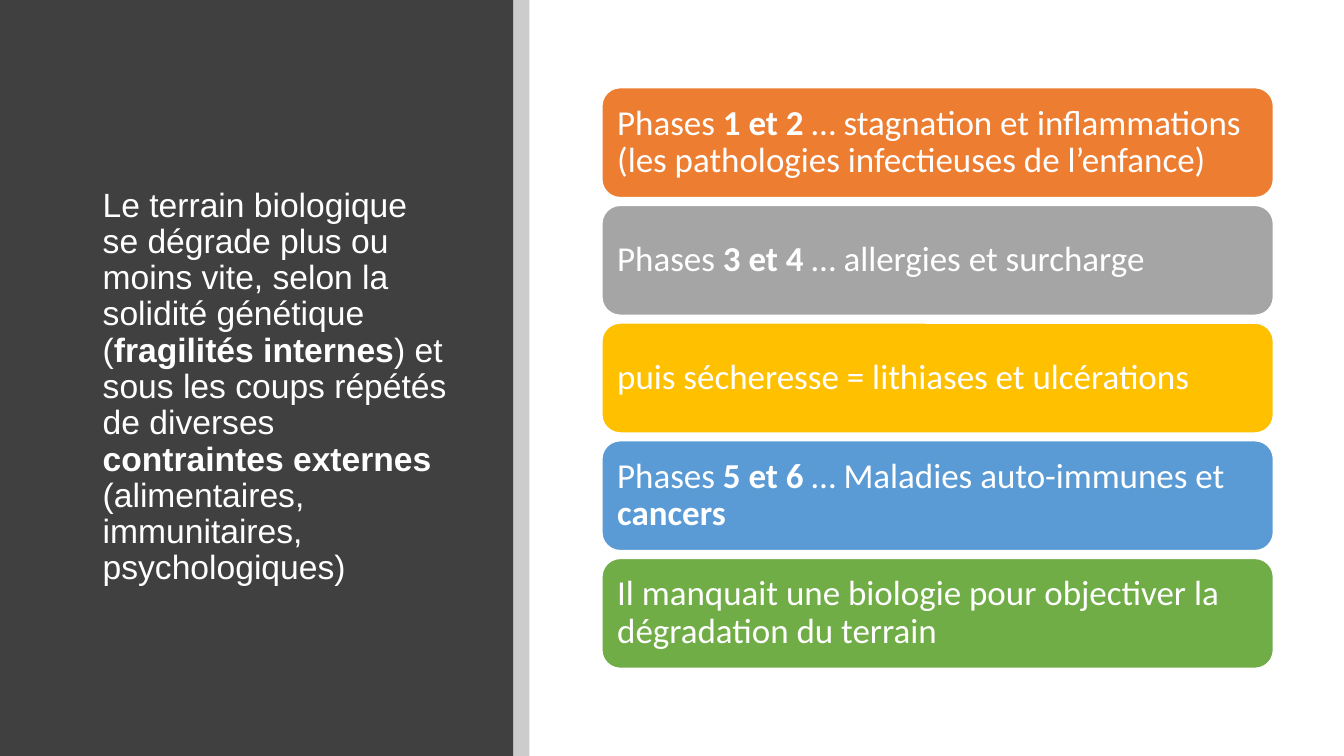
from lxml.etree import SubElement
from pptx import Presentation
from pptx.dml.color import RGBColor
from pptx.enum.shapes import MSO_SHAPE
from pptx.enum.text import MSO_ANCHOR, PP_ALIGN
from pptx.oxml.ns import qn
from pptx.util import Inches, Pt

WHITE = "FFFFFF"


def color(hex_code):
    return RGBColor.from_string(hex_code)


class PhaseSlide:
    """Holds the text style and the current slide."""

    line_spacing = 0.9
    text_color = WHITE

    def __init__(self, presentation):
        self.slide = presentation.slides.add_slide(presentation.slide_layouts[6])

    def block(self, kind, left, top, width, height, fill, outline=None, opacity=None):
        block = self.slide.shapes.add_shape(
            kind, Inches(left), Inches(top), Inches(width), Inches(height))
        block.shadow.inherit = False
        block.fill.solid()
        block.fill.fore_color.rgb = color(fill)
        if outline:
            block.line.color.rgb = color(outline)
            block.line.width = Pt(1)
        else:
            block.line.fill.background()
        if opacity is not None:
            fill_color = block.element.spPr.find(qn("a:solidFill")).find(qn("a:srgbClr"))
            SubElement(fill_color, qn("a:alpha")).set("val", str(opacity * 1000))
        return block

    def add_runs(self, frame, runs, font, size):
        """Fill a frame with (text, bold) runs, left-aligned and centred vertically."""
        frame.word_wrap = True
        frame.vertical_anchor = MSO_ANCHOR.MIDDLE
        paragraph = frame.paragraphs[0]
        paragraph.alignment = PP_ALIGN.LEFT
        paragraph.line_spacing = self.line_spacing
        for text, bold in runs:
            run = paragraph.add_run()
            run.text = text
            run.font.name = font
            run.font.size = Pt(size)
            run.font.bold = bold
            run.font.color.rgb = color(self.text_color)

    def statement(self, left, top, width, height, runs):
        statement = self.slide.shapes.add_textbox(
            Inches(left), Inches(top), Inches(width), Inches(height))
        self.add_runs(statement.text_frame, runs, "Arial", 24)

    def phase_card(self, left, top, width, height, fill, runs):
        card = self.block(MSO_SHAPE.ROUNDED_RECTANGLE, left, top, width, height,
                          fill, outline=WHITE)
        frame = card.text_frame
        frame.margin_left = frame.margin_right = Inches(0.1)
        frame.margin_top = frame.margin_bottom = Inches(0.1)
        self.add_runs(frame, runs, "Calibri", 25)


TERRAIN = [
    ("Le terrain biologique se dégrade plus ou moins vite, selon la solidité génétique (", False),
    ("fragilités internes", True),
    (") et sous les coups répétés de diverses ", False),
    ("contraintes externes", True),
    (" (alimentaires, immunitaires, psychologiques)", False),
]

PHASES = [
    ("ED7D31", [("Phases ", False), ("1 et 2 ", True),
                ("… stagnation et inflammations (les pathologies infectieuses de l’enfance)", False)]),
    ("A5A5A5", [("Phases ", False), ("3 et 4 ", True), ("… allergies et surcharge", False)]),
    ("FFC000", [("puis sécheresse = lithiases et ulcérations", False)]),
    ("5B9BD5", [("Phases ", False), ("5 et 6 ", True),
                ("… Maladies auto-immunes et ", False), ("cancers", True)]),
    ("70AD47", [("Il manquait une biologie pour objectiver la dégradation du terrain", False)]),
]


def main():
    presentation = Presentation()
    presentation.slide_width = Inches(13.33)
    presentation.slide_height = Inches(7.5)
    page = PhaseSlide(presentation)

    # Dark panel with the statement and its edge strip
    page.block(MSO_SHAPE.RECTANGLE, 0, 0, 5.09, 7.5, "404040")
    page.statement(0.92, 0.89, 3.65, 5.91, TERRAIN)
    page.block(MSO_SHAPE.RECTANGLE, 5.09, 0, 0.16, 7.5, "000000", opacity=20)

    # Phase cards, evenly spaced from first to last
    first_top, last_top = 0.87, 5.54
    step = (last_top - first_top) / (len(PHASES) - 1)
    for index, (fill, runs) in enumerate(PHASES):
        page.phase_card(5.97, first_top + index * step, 6.66, 1.09, fill, runs)

    presentation.save("out.pptx")


if __name__ == "__main__":
    main()
